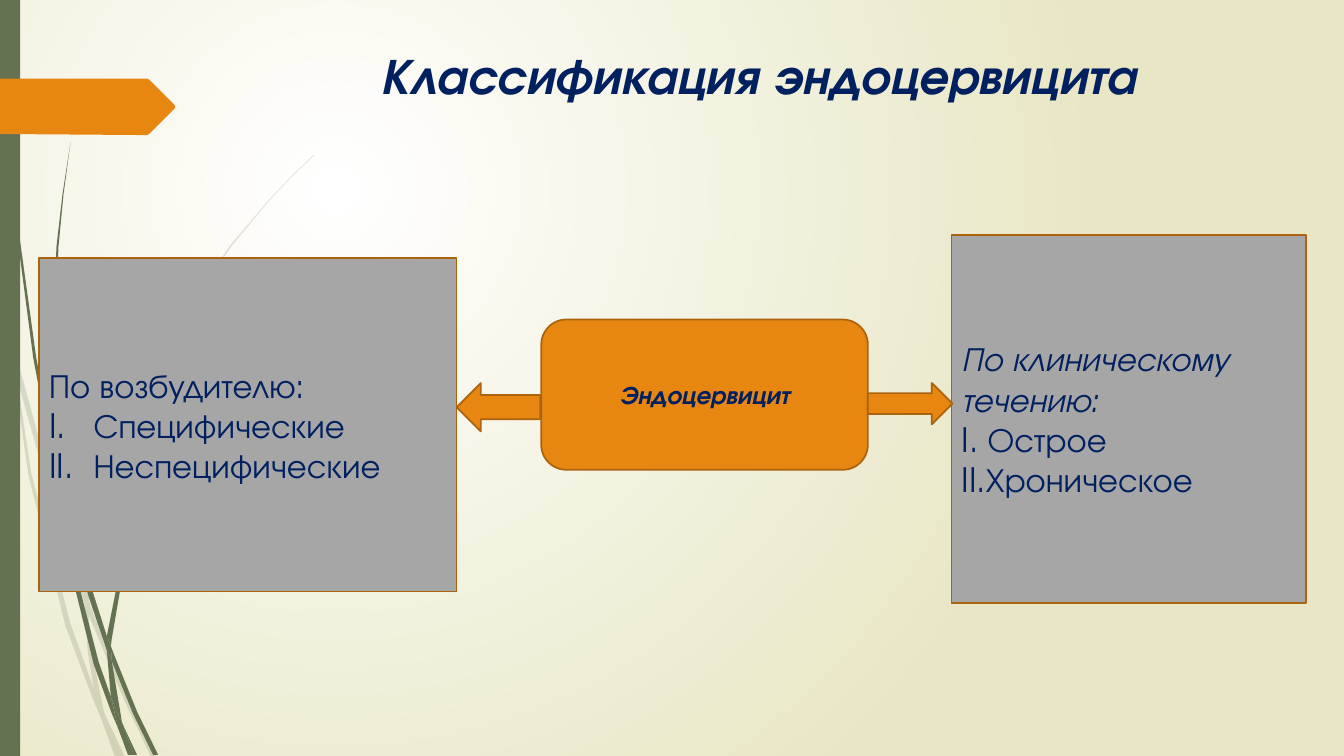
from dataclasses import dataclass

from lxml.etree import SubElement
from pptx import Presentation
from pptx.dml.color import RGBColor
from pptx.enum.shapes import MSO_SHAPE
from pptx.enum.text import MSO_ANCHOR, PP_ALIGN
from pptx.oxml.ns import qn
from pptx.util import Inches, Pt


@dataclass(frozen=True)
class Theme:
    font: str = "TeX Gyre Adventor"
    text: str = "002060"
    accent: str = "E78712"
    outline: str = "AB640D"
    panel: str = "A6A6A6"
    green: str = "647252"
    light: str = "FFFFFF"
    sand: str = "E8E6C4"
    title_size: int = 36
    panel_size: int = 24
    center_size: int = 18


THEME = Theme()
STRONG = {"bold": True, "italic": True}

PALE_BLADES = [
    [(.11, 3.5), (.09, 3.22), (0, 2.82), (0, 2.99), (.1, 3.44)],
    [(.58, 5.22), (.84, 5.99), (.85, 5.86), (.62, 5.2), (.14, 3.45), (.17, 3.76)],
    [(.92, 6.07), (.88, 5.96), (.88, 6.1), (1.23, 6.94), (1.5, 7.51), (1.55, 7.51),
     (1.27, 6.92)],
    [(1.19, 7.51), (1.24, 7.51), (1.05, 7.11)],
    [(.93, 6.83), (.7, 6.19), (.31, 4.69), (.17, 3.76), (.11, 3.5), (.28, 4.7),
     (.65, 6.21), (.92, 6.93), (1.01, 7.14), (.99, 7.07)],
    [(.84, 5.99), (.87, 6.46), (.93, 6.83), (.96, 6.92), (1.05, 7.11), (1.03, 7.06),
     (.91, 6.46), (.88, 6.1), (.88, 6.08)],
    [(.88, 5.84), (1.1, 4.62), (1.6, 3.49), (2.29, 2.45), (2.68, 1.98), (2.9, 1.75),
     (3.12, 1.54), (3.12, 1.53), (2.89, 1.75), (2.68, 1.97), (2.28, 2.44),
     (1.58, 3.48), (1.07, 4.61), (.85, 5.84), (.85, 5.86), (.88, 5.96)],
    [(1.01, 7.14), (1.14, 7.51), (1.19, 7.51)],
    [(.88, 6.08), (.88, 6.1), (.88, 5.96), (.85, 5.86), (.84, 5.99)],
    [(.96, 6.92), (.93, 6.83), (.99, 7.07), (1.01, 7.14), (1.19, 7.51), (1.05, 7.11)],
]
DARK_BLADES = [
    [(.07, 1.1), (.17, 2.33), (.33, 3.55), (.56, 4.77), (.57, 4.81), (.55, 4.57),
     (.55, 4.53), (.36, 3.55), (.19, 2.32), (.08, 1.09), (.05, .48), (.04, 0),
     (.03, 0), (.04, .48)],
    [(.88, 5.92), (1.06, 6.45), (1.06, 6.33), (1.06, 6.31), (.93, 5.9), (.6, 4.72),
     (.64, 5.05)],
    [(1.13, 6.49), (1.1, 6.41), (1.11, 6.56), (1.32, 7.08), (1.52, 7.49), (1.57, 7.49),
     (1.36, 7.06)],
    [(1.1, 6.91), (.98, 6.57), (.72, 5.56), (.64, 5.05), (.57, 4.77), (.68, 5.57),
     (.93, 6.59), (1.11, 7.08), (1.17, 7.22), (1.16, 7.17)],
    [(.6, 4.72), (.58, 4.53), (.54, 3.49), (.58, 2.45), (.63, 1.93), (.7, 1.41),
     (.62, 1.93), (.56, 2.45), (.52, 3.49), (.55, 4.49)],
    [(1.33, 7.49), (1.36, 7.49), (1.22, 7.19)],
    [(1.11, 6.33), (1.25, 5.52), (1.58, 4.76), (2.05, 4.06), (2.31, 3.74),
     (2.45, 3.59), (2.61, 3.44), (2.6, 3.44), (2.45, 3.58), (2.31, 3.73),
     (2.04, 4.05), (1.56, 4.74), (1.22, 5.51), (1.06, 6.31), (1.1, 6.41)],
    [(1.17, 7.22), (1.27, 7.49), (1.31, 7.49)],
    [(1.06, 6.45), (1.1, 6.91), (1.16, 7.06), (1.22, 7.19), (1.21, 7.16),
     (1.11, 6.56), (1.09, 6.51)],
    [(1.06, 6.45), (1.09, 6.51), (1.11, 6.56), (1.1, 6.41), (1.06, 6.31), (1.06, 6.33)],
    [(1.16, 7.06), (1.1, 6.91), (1.16, 7.17), (1.17, 7.22), (1.3, 7.49), (1.33, 7.49),
     (1.22, 7.19)],
]
TAG = [(1.73, 1.08), (1.48, 1.33), (1.46, 1.34), (1.36, 1.34), (0, 1.33), (0, .78),
       (1.36, .78), (1.46, .78), (1.48, .79), (1.73, 1.04), (1.74, 1.06)]


def rgb(color):
    return RGBColor.from_string(color)


def set_attrs(target, values):
    for name, value in values.items():
        setattr(target, name, value)


def paint(sp, color, outline=None):
    sp.shadow.inherit = False
    sp.fill.solid()
    sp.fill.fore_color.rgb = rgb(color)
    if outline:
        sp.line.color.rgb = rgb(outline)
        sp.line.width = Pt(1.25)
    else:
        sp.line.fill.background()


def add_block(s, kind, box, color, outline=None):
    sp = s.shapes.add_shape(kind, *map(Inches, box))
    paint(sp, color, outline)
    return sp


def write(tf, lines, size, align, anchor):
    set_attrs(tf, {"word_wrap": True, "vertical_anchor": anchor})
    for i, (text, style) in enumerate(lines):
        p = tf.add_paragraph() if i else tf.paragraphs[0]
        p.alignment = align
        r = p.add_run()
        r.text = text
        set_attrs(r.font, {"name": THEME.font, "size": Pt(size), **style})
        r.font.color.rgb = rgb(THEME.text)


def number_roman(p):
    pPr = p._p.get_or_add_pPr()
    indent = Inches(0.44)
    pPr.set("marL", str(indent))
    pPr.set("indent", str(-indent))
    SubElement(pPr, qn("a:buFont"), typeface=THEME.font)
    SubElement(pPr, qn("a:buAutoNum"), type="romanUcPeriod")


def add_outline(s, points, color, opacity=100):
    start, *rest = [(Inches(x), Inches(y)) for x, y in points]
    builder = s.shapes.build_freeform(*start)
    builder.add_line_segments(rest, close=True)
    sp = builder.convert_to_shape()
    paint(sp, color)
    if opacity < 100:
        clr = sp._element.spPr.find(f"{qn('a:solidFill')}/{qn('a:srgbClr')}")
        SubElement(clr, qn("a:alpha"), val=str(opacity * 1000))


def set_background(s):
    fill = s.background.fill
    fill.gradient()
    for stop, color in zip(fill.gradient_stops, (THEME.light, THEME.sand)):
        stop.color.rgb = rgb(color)
    grad = next(s._element.iter(qn("a:gradFill")))
    grad.remove(grad.find(qn("a:lin")))
    focus = SubElement(grad, qn("a:path"), path="circle")
    SubElement(focus, qn("a:fillToRect"), l="50000", t="50000", r="100000", b="100000")


def add_decor(s):
    for blades, opacity in ((PALE_BLADES, 20), (DARK_BLADES, 100)):
        for points in blades:
            add_outline(s, points, THEME.green, opacity)
    add_block(s, MSO_SHAPE.RECTANGLE, (0, 0, 0.2, 7.5), THEME.green)
    add_outline(s, TAG, THEME.accent)


def add_title(s, text):
    sp = s.shapes.title
    set_attrs(sp, {"left": Inches(2.65), "top": Inches(0.39),
                   "width": Inches(9.75), "height": Inches(1.4)})
    write(sp.text_frame, [(text, STRONG)], THEME.title_size,
          PP_ALIGN.CENTER, MSO_ANCHOR.TOP)


def add_panel(s, box, lines):
    sp = add_block(s, MSO_SHAPE.RECTANGLE, box, THEME.panel, THEME.outline)
    write(sp.text_frame, lines, THEME.panel_size, PP_ALIGN.LEFT, MSO_ANCHOR.MIDDLE)
    return sp


def main():
    prs = Presentation()
    set_attrs(prs, {"slide_width": Inches(40 / 3), "slide_height": Inches(7.5)})
    s = prs.slides.add_slide(prs.slide_layouts[5])
    set_background(s)
    add_decor(s)
    add_title(s, "Классификация эндоцервицита")

    center = add_block(s, MSO_SHAPE.ROUNDED_RECTANGLE, (5.37, 3.17, 3.24, 1.49),
                       THEME.accent, THEME.outline)
    write(center.text_frame, [("Эндоцервицит", STRONG)], THEME.center_size,
          PP_ALIGN.CENTER, MSO_ANCHOR.MIDDLE)

    agents = add_panel(s, (0.39, 2.56, 4.14, 3.31), [
        ("По возбудителю:", {}), ("Специфические", {}), ("Неспецифические", {})])
    for p in agents.text_frame.paragraphs[1:]:
        number_roman(p)
    add_panel(s, (9.44, 2.33, 3.52, 3.65), [
        ("По клиническому течению:", {"italic": True}),
        ("I. Острое", {}), ("II.Хроническое", {})])

    for kind, box in ((MSO_SHAPE.RIGHT_ARROW, (8.61, 3.8, 0.84, 0.41)),
                      (MSO_SHAPE.LEFT_ARROW, (4.53, 3.8, 0.83, 0.48))):
        add_block(s, kind, box, THEME.accent, THEME.outline)
    prs.save("out.pptx")


if __name__ == "__main__":
    main()
